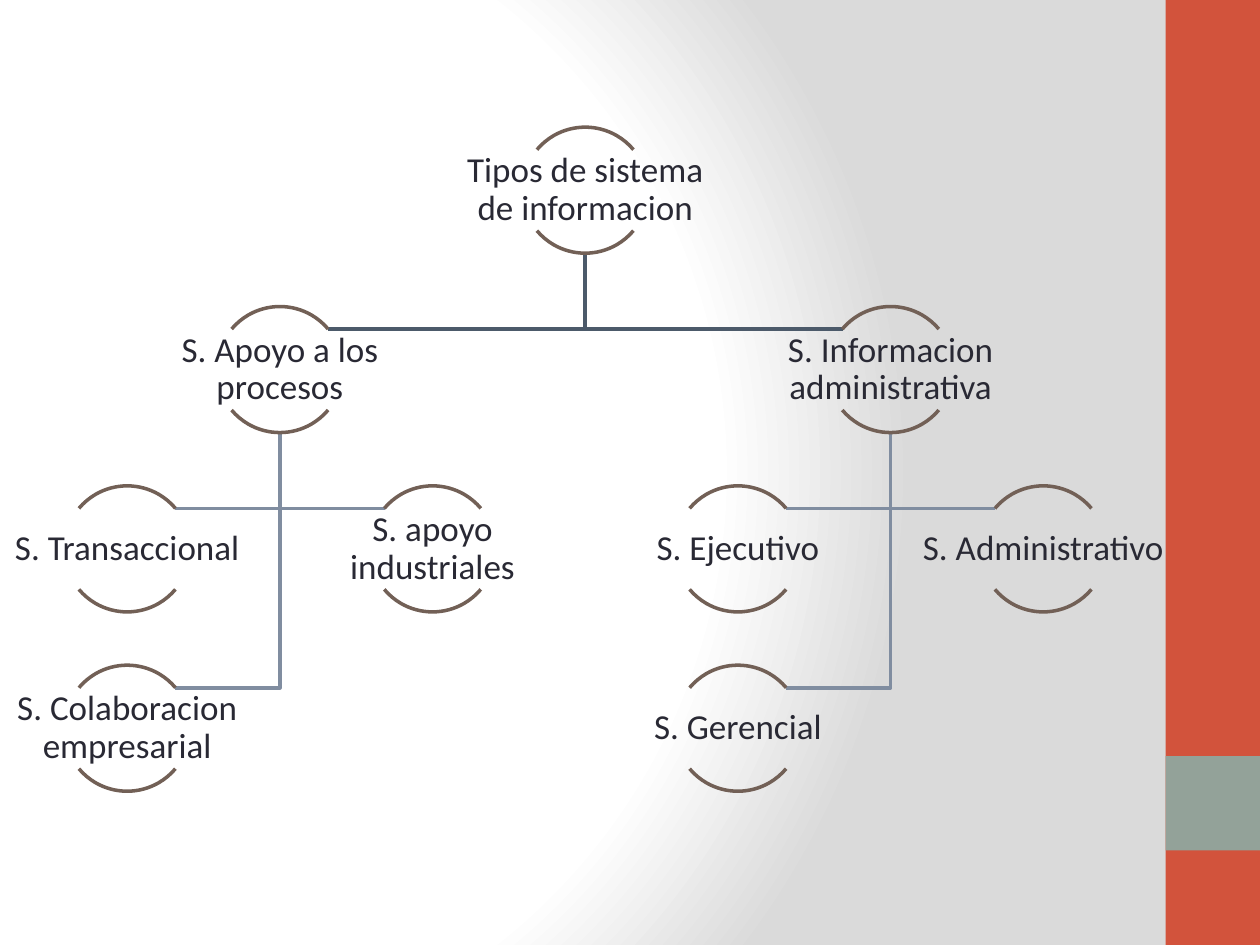
import pptx
import pptx.util
import pptx.dml.color
import pptx.enum.shapes
import pptx.enum.text
import pptx.oxml
import pptx.oxml.ns

Inches = pptx.util.Inches
SHAPE = pptx.enum.shapes.MSO_SHAPE


def rgb(color):
    return pptx.dml.color.RGBColor.from_string(color)


prs = pptx.Presentation()
prs.slide_width, prs.slide_height = Inches(10), Inches(7.5)
s = prs.slides.add_slide(prs.slide_layouts[6])

# Radial background
s.background.fill.gradient()
grad = s.element.find(".//" + pptx.oxml.ns.qn("a:gradFill"))
stops = "".join(
    f'<a:gs pos="{pos * 1000}"><a:srgbClr val="{color}"/></a:gs>'
    for pos, color in [(0, "FFFFFF"), (75, "FFFFFF"), (100, "DADADA")]
)
grad.getparent().replace(grad, pptx.oxml.parse_xml(
    f'<a:gradFill {pptx.oxml.ns.nsdecls("a")} rotWithShape="1"><a:gsLst>{stops}</a:gsLst>'
    '<a:path path="circle"><a:fillToRect l="20000" t="50000" r="100000" b="50000"/>'
    '</a:path></a:gradFill>'
))

# Side bands
for top, height, color in [(0, 7.5, "D2533C"), (6, 0.75, "93A299")]:
    sp = s.shapes.add_shape(SHAPE.RECTANGLE, Inches(9.25), Inches(top), Inches(0.75), Inches(height))
    sp.shadow.inherit = False
    sp.fill.solid()
    sp.fill.fore_color.rgb = rgb(color)
    sp.line.fill.background()

# Chart nodes: text, column, row, parent index
nodes = [
    ("Tipos de sistema de informacion", 3, 0, None),
    ("S. Apoyo a los procesos", 1, 1, 0),
    ("S. Transaccional", 0, 2, 1),
    ("S. apoyo industriales", 2, 2, 1),
    ("S. Colaboracion empresarial", 0, 3, 1),
    ("S. Informacion administrativa", 5, 1, 0),
    ("S. Ejecutivo", 4, 2, 5),
    ("S. Administrativo", 6, 2, 5),
    ("S. Gerencial", 4, 3, 5),
]
col_gap = (8.28 - 1.01) / 6
row_gap = (5.28 - 1.01) / 3
places = [(1.01 + col * col_gap, 1.01 + row * row_gap) for text, col, row, parent in nodes]

# Elbow lines from each parent to the near arc end of its child
for (text, col, row, parent), (x, y) in reversed(list(zip(nodes, places))):
    if parent is None:
        continue
    px, py = places[parent]
    end_x = x + 0.38 if x < px else x - 0.38
    elbow_y = y + 0.18
    fb = s.shapes.build_freeform(Inches(px), Inches(py + 1))
    fb.add_line_segments(
        [(Inches(px), Inches(elbow_y)), (Inches(end_x), Inches(elbow_y))], close=False
    )
    sp = fb.convert_to_shape()
    sp.shadow.inherit = False
    sp.fill.background()
    sp.line.color.rgb = rgb("4C5A6A" if row == 1 else "808DA0")
    sp.line.width = pptx.util.Pt(2)

# Nodes: upper and lower arc around a label
for (text, col, row, parent), (x, y) in zip(nodes, places):
    for start, end in [(132, 192), (24, 84)]:
        sp = s.shapes.add_shape(SHAPE.ARC, Inches(x - 0.5), Inches(y), Inches(1), Inches(1))
        sp.adjustments[0], sp.adjustments[1] = start, end
        sp.shadow.inherit = False
        sp.fill.background()
        sp.line.color.rgb = rgb("726056")
        sp.line.width = pptx.util.Pt(2)

    tf = s.shapes.add_textbox(Inches(x - 1), Inches(y + 0.18), Inches(2), Inches(0.64)).text_frame
    tf.word_wrap = True
    tf.vertical_anchor = pptx.enum.text.MSO_ANCHOR.MIDDLE
    tf.margin_left = tf.margin_right = tf.margin_top = tf.margin_bottom = Inches(0.01)
    p = tf.paragraphs[0]
    p.text = text
    p.alignment = pptx.enum.text.PP_ALIGN.CENTER
    p.line_spacing = 0.9
    p.font.name = "Calibri"
    p.font.size = pptx.util.Pt(20)
    p.font.color.rgb = rgb("292934")

prs.save("out.pptx")
